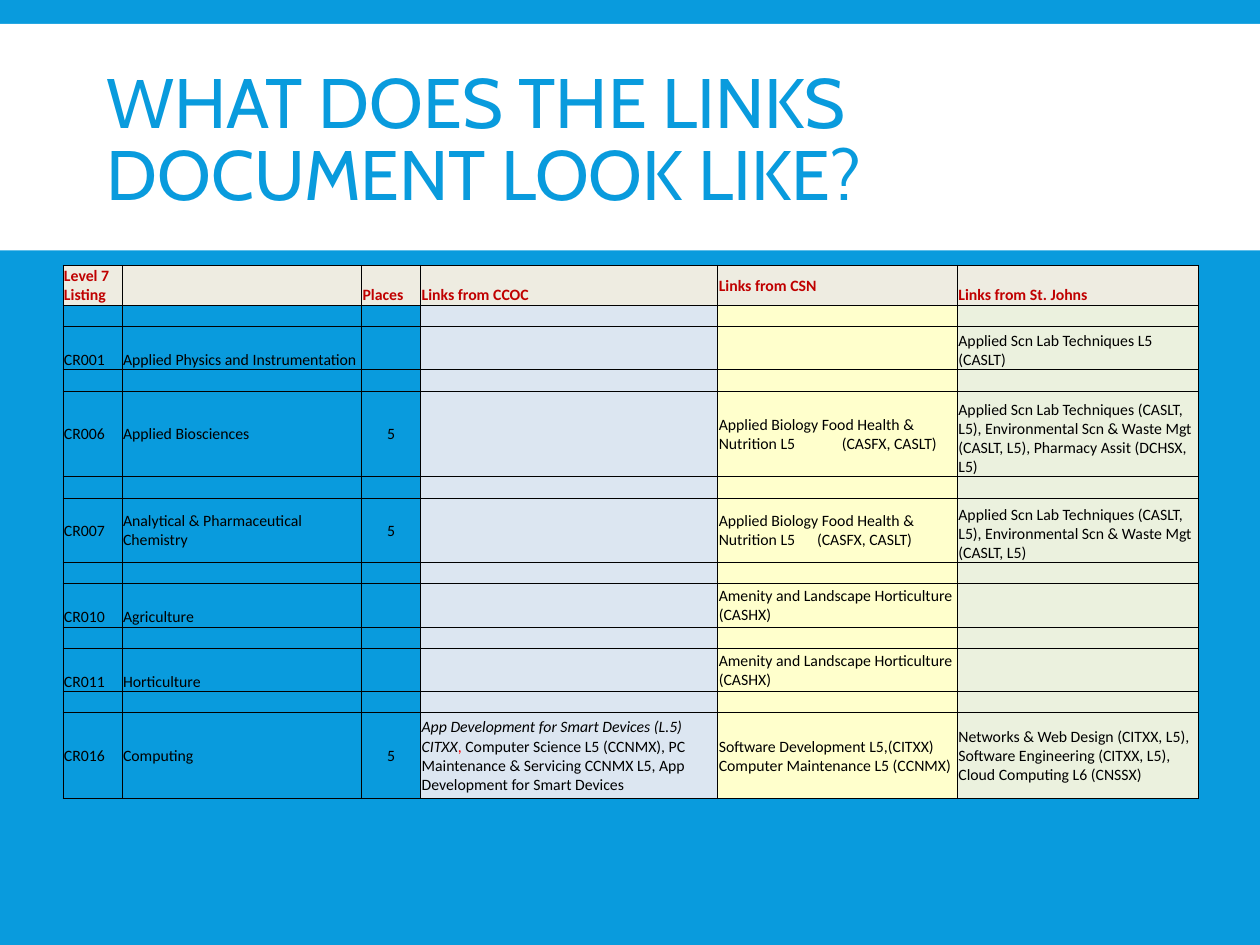
from lxml import etree
from pptx import Presentation
from pptx.dml.color import RGBColor
from pptx.enum.shapes import MSO_SHAPE
from pptx.enum.text import MSO_ANCHOR, PP_ALIGN
from pptx.oxml.ns import qn
from pptx.util import Cm, Pt

RECTANGLE = MSO_SHAPE.RECTANGLE
ANCHORS = {"m": MSO_ANCHOR.MIDDLE, "b": MSO_ANCHOR.BOTTOM}
LEFT, CENTER = PP_ALIGN.LEFT, PP_ALIGN.CENTER

COLORS = {
    "blue": "099BDD",
    "white": "FFFFFF",
    "black": "000000",
    "heading": "C00000",
    "comma": "FF0000",
    "header": "EEECE1",
    "ccoc": "DCE6F1",
    "csn": "FFFFCC",
    "st_johns": "EBF1DE",
}
COLUMN_FILLS = [None, None, None, "ccoc", "csn", "st_johns"]
COLUMN_WIDTHS = [1.19, 4.83, 1.19, 5.99, 4.83, 4.85]
HEADER_HEIGHT, GAP_HEIGHT = 0.8, 0.43

HEADINGS = ["Level 7 Listing", "", "Places", "Links from CCOC",
            "Links from CSN", "Links from St. Johns"]
SMART_DEVICES = [
    ("App Development for Smart Devices (L.5) CITXX", "black", True),
    (",", "comma", False),
    (" Computer Science L5 (CCNMX), PC Maintenance & Servicing CCNMX L5, "
     "App Development for Smart Devices", "black", False),
]
BIOLOGY = "Applied Biology Food Health & Nutrition L5\t(CASFX, CASLT)"
LANDSCAPE = "Amenity and Landscape Horticulture (CASHX)"
COURSES = [
    (0.87, "bbbbbb", ["CR001", "Applied Physics and Instrumentation", "", "", "",
                      "Applied Scn Lab Techniques L5 (CASLT)"]),
    (1.73, "mmmmmb", ["CR006", "Applied Biosciences", "5", "", BIOLOGY,
                      "Applied Scn Lab Techniques (CASLT, L5), Environmental Scn & "
                      "Waste Mgt (CASLT, L5), Pharmacy Assit (DCHSX, L5)"]),
    (1.3, "mmmmmb", ["CR007", "Analytical & Pharmaceutical Chemistry", "5", "", BIOLOGY,
                     "Applied Scn Lab Techniques (CASLT, L5), Environmental Scn & "
                     "Waste Mgt (CASLT, L5)"]),
    (0.87, "bbbbmb", ["CR010", "Agriculture", "", "", LANDSCAPE, ""]),
    (0.87, "bbbbmb", ["CR011", "Horticulture", "", "", LANDSCAPE, ""]),
    (1.73, "mmmmmm", ["CR016", "Computing", "5", SMART_DEVICES,
                      "Software Development L5,(CITXX)\vComputer Maintenance L5 (CCNMX)",
                      "Networks & Web Design (CITXX, L5), Software Engineering "
                      "(CITXX, L5), Cloud Computing L6 (CNSSX)"]),
]
TAB_STOPS = {"CR006": 2.48, "CR007": 1.98}


def rgb(name):
    return RGBColor.from_string(COLORS[name])


class SlideBuilder:
    title_font, title_size = "Cabin", 40
    table_font, table_size = "Calibri", 9
    border_width = 0.5

    def __init__(self, slide):
        self.slide = slide
        fill = slide.background.fill
        fill.solid()
        fill.fore_color.rgb = rgb("blue")

    def band(self, left, top, width, height, color):
        shape = self.slide.shapes.add_shape(
            RECTANGLE, Cm(left), Cm(top), Cm(width), Cm(height))
        shape.shadow.inherit = False
        shape.fill.solid()
        shape.fill.fore_color.rgb = rgb(color)
        shape.line.fill.background()

    def title(self, left, top, width, height, text):
        box = self.slide.shapes.add_textbox(Cm(left), Cm(top), Cm(width), Cm(height))
        frame = box.text_frame
        frame.word_wrap = True
        frame.vertical_anchor = ANCHORS["m"]
        para = frame.paragraphs[0]
        para.text = text
        para.line_spacing = 0.85
        self.style(para.font, self.title_font, self.title_size, "blue")

    def table(self, left, top, widths, heights):
        frame = self.slide.shapes.add_table(
            len(heights), len(widths), Cm(left), Cm(top),
            Cm(sum(widths)), Cm(sum(heights)))
        table = frame.table
        table.first_row = table.horz_banding = False
        for column, width in zip(table.columns, widths):
            column.width = Cm(width)
        for row, height in zip(table.rows, heights):
            row.height = Cm(height)
        return table

    def cell(self, cell, content, fill, anchor, color="black", bold=False,
             align=LEFT, tab=None):
        cell.margin_left = cell.margin_right = cell.margin_top = Cm(0.02)
        cell.margin_bottom = 0
        cell.vertical_anchor = ANCHORS[anchor]
        if fill:
            cell.fill.solid()
            cell.fill.fore_color.rgb = rgb(fill)
        else:
            cell.fill.background()
        self.borders(cell)
        para = cell.text_frame.paragraphs[0]
        para.alignment = align
        if tab:
            tabs = etree.SubElement(para._p.get_or_add_pPr(), qn("a:tabLst"))
            etree.SubElement(tabs, qn("a:tab"), pos=str(Cm(tab)), algn="l")
        self.style(para.font, self.table_font, self.table_size, color, bold)
        if not content:
            etree.SubElement(para._p, qn("a:endParaRPr"), sz=str(self.table_size * 100))
        elif isinstance(content, str):
            para.text = content
        else:
            for text, span_color, italic in content:
                span = para.add_run()
                span.text = text
                span.font.italic = italic
                span.font.color.rgb = rgb(span_color)

    def borders(self, cell):
        properties = cell._tc.get_or_add_tcPr()
        for index, side in enumerate("LRTB"):
            line = etree.Element(qn(f"a:ln{side}"), w=str(Pt(self.border_width)))
            solid = etree.SubElement(line, qn("a:solidFill"))
            etree.SubElement(solid, qn("a:srgbClr"), val=COLORS["black"])
            properties.insert(index, line)

    def style(self, font, name, size, color, bold=False):
        font.name = name
        font.size = Pt(size)
        font.bold = bold
        font.color.rgb = rgb(color)


def main():
    deck = Presentation()
    deck.slide_width, deck.slide_height = Cm(25.4), Cm(19.05)
    page = SlideBuilder(deck.slides.add_slide(deck.slide_layouts[6]))
    page.band(0, 0.48, 25.4, 4.57, "white")
    page.title(1.9, 0.79, 21.6, 4.19, "WHAT DOES THE LINKS DOCUMENT LOOK LIKE?")

    heights = [HEADER_HEIGHT]
    for height, _, _ in COURSES:
        heights += [GAP_HEIGHT, height]
    table = page.table(1.27, 5.35, COLUMN_WIDTHS, heights)

    for column, (heading, anchor) in enumerate(zip(HEADINGS, "bbbbmb")):
        page.cell(table.cell(0, column), heading, "header", anchor, "heading", True)
    for index, (_, anchors, texts) in enumerate(COURSES):
        gap_row = 2 * index + 1
        for column, fill in enumerate(COLUMN_FILLS):
            page.cell(table.cell(gap_row, column), "", fill, "b")
            page.cell(table.cell(gap_row + 1, column), texts[column], fill,
                      anchors[column], align=CENTER if column == 2 else LEFT,
                      tab=TAB_STOPS.get(texts[0]) if column == 4 else None)
    deck.save("out.pptx")


if __name__ == "__main__":
    main()
